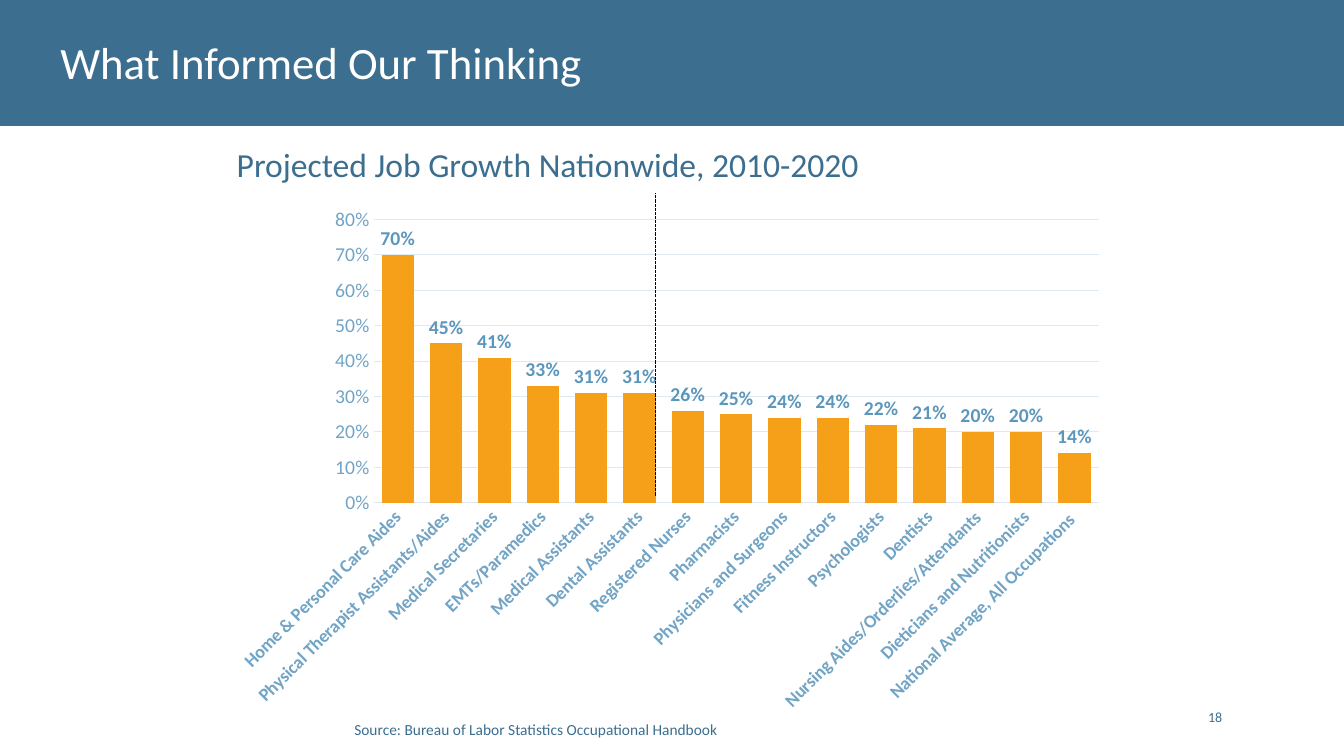
from dataclasses import dataclass

from pptx import Presentation
from pptx.chart.data import CategoryChartData
from pptx.dml.color import RGBColor
from pptx.enum.chart import XL_CHART_TYPE, XL_LABEL_POSITION, XL_TICK_MARK
from pptx.enum.dml import MSO_LINE
from pptx.enum.shapes import MSO_CONNECTOR, MSO_SHAPE
from pptx.enum.text import MSO_ANCHOR, PP_ALIGN
from pptx.oxml import parse_xml
from pptx.oxml.ns import nsdecls, qn
from pptx.util import Pt

COLUMNS = XL_CHART_TYPE.COLUMN_CLUSTERED
OUTSIDE_END = XL_LABEL_POSITION.OUTSIDE_END
NO_TICK = XL_TICK_MARK.NONE
DASH = MSO_LINE.SQUARE_DOT
STRAIGHT = MSO_CONNECTOR.STRAIGHT
RECT = MSO_SHAPE.RECTANGLE
TOP, MIDDLE, BOTTOM = MSO_ANCHOR.TOP, MSO_ANCHOR.MIDDLE, MSO_ANCHOR.BOTTOM
LEFT, RIGHT = PP_ALIGN.LEFT, PP_ALIGN.RIGHT


@dataclass(frozen=True)
class Theme:
    font: str = "Calibri"
    blue: str = "3B6E8F"
    label_blue: str = "5B96BC"
    axis_blue: str = "71A4C5"
    grid: str = "DEEAF2"
    orange: str = "F6A01A"
    white: str = "FFFFFF"
    black: str = "000000"
    title: float = 32
    subtitle: float = 24
    value: float = 14
    category: float = 13
    source: float = 11
    small: float = 10
    hairline: float = 0.75


JOB_GROWTH = {
    "Home & Personal Care Aides": 0.70,
    "Physical Therapist Assistants/Aides": 0.45,
    "Medical Secretaries": 0.41,
    "EMTs/Paramedics": 0.33,
    "Medical Assistants": 0.31,
    "Dental Assistants": 0.31,
    "Registered Nurses": 0.26,
    "Pharmacists": 0.25,
    "Physicians and Surgeons": 0.24,
    "Fitness Instructors": 0.24,
    "Psychologists": 0.22,
    "Dentists": 0.21,
    "Nursing Aides/Orderlies/Attendants": 0.20,
    "Dieticians and Nutritionists": 0.20,
    "National Average, All Occupations ": 0.14,
}


class SlideBuilder:
    def __init__(self, s, theme):
        self.s, self.theme = s, theme

    def style_font(self, font, size, color, bold=False):
        font.name, font.size, font.bold = self.theme.font, Pt(size), bold
        font.color.rgb = RGBColor.from_string(color)

    def style_line(self, line, color):
        line.color.rgb = RGBColor.from_string(color)
        line.width = Pt(self.theme.hairline)

    def band(self, x, y, w, h, color):
        sp = self.s.shapes.add_shape(RECT, Pt(x), Pt(y), Pt(w), Pt(h))
        sp.shadow.inherit = False
        sp.fill.solid()
        sp.fill.fore_color.rgb = RGBColor.from_string(color)
        sp.line.fill.background()

    def text(self, text, x, y, w, h, *, size, color, anchor=TOP, align=LEFT):
        sp = self.s.shapes.add_textbox(Pt(x), Pt(y), Pt(w), Pt(h))
        tf = sp.text_frame
        tf.word_wrap, tf.vertical_anchor = True, anchor
        p = tf.paragraphs[0]
        p.alignment = align
        r = p.add_run()
        r.text = text
        self.style_font(r.font, size, color)

    def dashed_line(self, x1, y1, x2, y2, color):
        line = self.s.shapes.add_connector(STRAIGHT, Pt(x1), Pt(y1), Pt(x2), Pt(y2))
        self.style_line(line.line, color)
        line.line.dash_style = DASH
        line._element.spPr.append(parse_xml(f"<a:effectLst {nsdecls('a')}/>"))

    def column_chart(self, values, x, y, w, h, plot):
        t = self.theme
        data = CategoryChartData(number_format="0%")
        data.categories = list(values)
        data.add_series("Series 1", list(values.values()))
        chart = self.s.shapes.add_chart(COLUMNS, Pt(x), Pt(y), Pt(w), Pt(h), data).chart
        chart.has_legend = chart.has_title = False
        self.style_font(chart.font, t.small, t.blue)

        # Columns and their labels
        columns = chart.plots[0]
        columns.gap_width, columns.overlap = 50, -27
        columns.vary_by_categories = False
        fill = columns.series[0].format.fill
        fill.solid()
        fill.fore_color.rgb = RGBColor.from_string(t.orange)
        columns.has_data_labels = True
        labels = columns.data_labels
        labels.show_value, labels.position = True, OUTSIDE_END
        labels.number_format, labels.number_format_is_linked = "0%", False
        self.style_font(labels.font, t.value, t.label_blue, bold=True)

        # Axes
        cat, val = chart.category_axis, chart.value_axis
        for axis in (cat, val):
            axis.major_tick_mark = axis.minor_tick_mark = NO_TICK
        self.style_font(cat.tick_labels.font, t.category, t.axis_blue, bold=True)
        self.style_line(cat.format.line, t.grid)
        cat._element.find(qn("c:txPr")).find(qn("a:bodyPr")).set("rot", "-2700000")
        self.style_font(val.tick_labels.font, t.value, t.axis_blue)
        val.tick_labels.number_format = "0%"
        val.tick_labels.number_format_is_linked = False
        val.minimum_scale, val.maximum_scale, val.major_unit = 0, 0.8, 0.1
        val.format.line.fill.background()
        val.has_major_gridlines = True
        self.style_line(val.major_gridlines.format.line, t.grid)

        # Plot area as fractions of the chart
        area = chart._chartSpace.chart.plotArea
        for old in area.findall(qn("c:layout")):
            area.remove(old)
        sizes = "".join(f'<c:{k} val="{v}"/>' for k, v in zip("xywh", plot))
        area.insert(0, parse_xml(
            f'<c:layout {nsdecls("c")}><c:manualLayout><c:layoutTarget val="inner"/>'
            f'<c:xMode val="edge"/><c:yMode val="edge"/>{sizes}'
            "</c:manualLayout></c:layout>"))


def main():
    prs = Presentation()
    prs.slide_width, prs.slide_height = Pt(960), Pt(540)
    t = Theme()
    b = SlideBuilder(prs.slides.add_slide(prs.slide_layouts[6]), t)

    # Header band, page number and chart heading
    b.band(0, 0, 960, 90, t.blue)
    b.text("18", 841.9, 493, 38.2, 28.8, size=t.small, color=t.blue,
           anchor=BOTTOM, align=RIGHT)
    b.text("Projected Job Growth Nationwide, 2010-2020", 162, 78.5, 648, 77.8,
           size=t.subtitle, color=t.blue, anchor=MIDDLE)

    # Chart, source and divider
    b.column_chart(JOB_GROWTH, 158.2, 141.7, 639.4, 375.1, (0.17, 0.04, 0.81, 0.54))
    b.text("Source: Bureau of Labor Statistics Occupational Handbook",
           246, 510.8, 282, 20.9, size=t.source, color=t.blue)
    b.dashed_line(468, 354, 468, 138, t.black)

    # Slide title
    b.text("What Informed Our Thinking", 36, -0.7, 771, 90,
           size=t.title, color=t.white, anchor=MIDDLE)

    prs.save("out.pptx")


if __name__ == "__main__":
    main()
